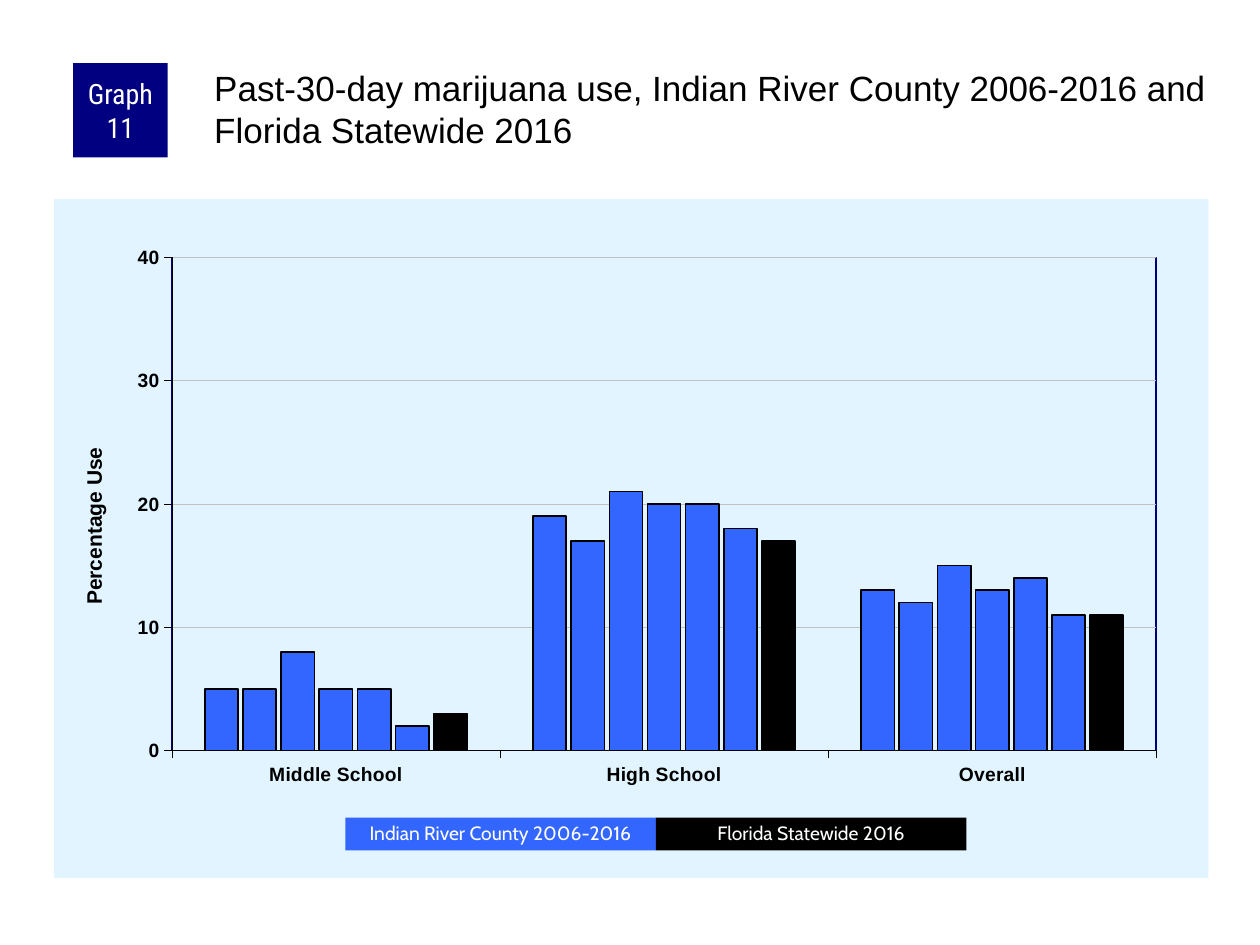
from pptx import Presentation
from pptx.chart.data import CategoryChartData
from pptx.dml.color import RGBColor
from pptx.enum.chart import XL_CHART_TYPE, XL_TICK_MARK
from pptx.enum.shapes import MSO_SHAPE
from pptx.enum.text import MSO_ANCHOR, MSO_AUTO_SIZE, PP_ALIGN
from pptx.oxml import parse_xml
from pptx.oxml.ns import nsdecls, qn
from pptx.util import Inches, Pt

COLORS = {"navy": "000080", "county": "3366FF", "state": "000000",
          "panel": "E1F4FF", "grid": "C0C0C0", "text": "000000", "white": "FFFFFF"}
CATEGORIES = ["Middle School", "High School", "Overall"]
COUNTY = [(5, 19, 13), (5, 17, 12), (8, 21, 15), (5, 20, 13), (5, 20, 14), (2, 18, 11)]
STATE = (3, 17, 11)


def rgb(name):
    """Look up a palette colour."""
    return RGBColor.from_string(COLORS[name])


def style_font(font, name, size, color, bold=False):
    """Set the face, size, colour and weight of a font."""
    font.name, font.size, font.bold = name, Pt(size), bold
    font.color.rgb = rgb(color)


def style_line(line, color, width):
    """Give a line a colour and a width in points."""
    line.color.rgb = rgb(color)
    line.width = Pt(width)


def set_insets(tf, left, top, right, bottom):
    """Set the four text margins in inches."""
    tf.margin_left, tf.margin_top = Inches(left), Inches(top)
    tf.margin_right, tf.margin_bottom = Inches(right), Inches(bottom)


def add_label(s, box, text, fill, font, size, spacing=1.0):
    """Add a filled box with centred white text."""
    sp = s.shapes.add_shape(MSO_SHAPE.RECTANGLE, *map(Inches, box))
    sp.shadow.inherit = False
    sp.fill.solid()
    sp.fill.fore_color.rgb = rgb(fill)
    sp.line.fill.background()
    tf = sp.text_frame
    tf.word_wrap = True
    tf.vertical_anchor = MSO_ANCHOR.MIDDLE
    set_insets(tf, 0.05, 0, 0.05, 0)
    p = tf.paragraphs[0]
    p.text, p.alignment, p.line_spacing = text, PP_ALIGN.CENTER, spacing
    style_font(p.font, font, size, "white")


def add_header(s, box):
    """Place the graph number and the slide title."""
    x, y, w, h = box
    badge, indent = 0.75, 1.09
    add_label(s, (x, y, badge, badge), "Graph 11", "navy", "Roboto Condensed", 16)
    sp = s.shapes.title
    sp.left, sp.top = Inches(x + indent), Inches(y)
    sp.width, sp.height = Inches(w - indent), Inches(h)
    tf = sp.text_frame
    tf.word_wrap, tf.auto_size = True, MSO_AUTO_SIZE.NONE
    tf.vertical_anchor = MSO_ANCHOR.TOP
    set_insets(tf, 0.03, 0.03, 0, 0)
    p = tf.paragraphs[0]
    p.text = "Past-30-day marijuana use, Indian River County 2006-2016 and Florida Statewide 2016"
    p.alignment = PP_ALIGN.LEFT
    style_font(p.font, "Arial", 20, "text")


def manual_layout(x, y, w=None, h=None):
    """Build a chart layout from shares of the chart's size."""
    target = '<c:layoutTarget val="inner"/>' if w else ""
    size = f'<c:w val="{w}"/><c:h val="{h}"/>' if w else ""
    return parse_xml(
        f'<c:layout {nsdecls("c")}><c:manualLayout>{target}<c:xMode val="edge"/>'
        f'<c:yMode val="edge"/><c:x val="{x}"/><c:y val="{y}"/>{size}'
        '</c:manualLayout></c:layout>')


def set_layout(parent, index, layout):
    """Replace the layout of a chart part."""
    for old in parent.findall(qn("c:layout")):
        parent.remove(old)
    parent.insert(index, layout)


def area_format(fill, line):
    """Build the fill and outline of a chart area."""
    return parse_xml(f'<c:spPr {nsdecls("c", "a")}>{fill}{line}</c:spPr>')


def style_axis(axis):
    """Give an axis its labels, ticks and line."""
    axis.major_tick_mark, axis.minor_tick_mark = XL_TICK_MARK.OUTSIDE, XL_TICK_MARK.NONE
    style_font(axis.tick_labels.font, "Arial", 11, "text", True)
    style_line(axis.format.line, "text", 0.25)


def format_value_axis(axis):
    """Set the scale, gridlines and title of the value axis."""
    axis.minimum_scale, axis.maximum_scale, axis.major_unit = 0, 40, 10
    style_line(axis.major_gridlines.format.line, "grid", 0.25)
    title = axis.axis_title
    p = title.text_frame.paragraphs[0]
    p.text = "Percentage Use"
    style_font(p.font, "Arial", 12, "text", True)
    body = title.text_frame._txBody
    body.bodyPr.set("rot", "-5400000")
    body.bodyPr.set("vert", "horz")
    set_layout(title._element, 1, manual_layout(0.02, 0.36))


def add_use_chart(s, box):
    """Add the column chart of marijuana use."""
    data = CategoryChartData()
    data.categories = CATEGORIES
    for i, values in enumerate(COUNTY + [STATE], 1):
        data.add_series(f"Series {i}", values)
    chart = s.shapes.add_chart(XL_CHART_TYPE.COLUMN_CLUSTERED, *map(Inches, box), data).chart
    chart.has_legend = chart.has_title = False
    style_font(chart.font, "Arial", 8, "text")
    plot = chart.plots[0]
    plot.gap_width, plot.overlap, plot.vary_by_categories = 200, -15, False
    for i, series in enumerate(plot.series):
        series.format.fill.solid()
        series.format.fill.fore_color.rgb = rgb("county" if i < len(COUNTY) else "state")
        style_line(series.format.line, "text", 1)
    style_axis(chart.category_axis)
    style_axis(chart.value_axis)
    format_value_axis(chart.value_axis)
    root = chart._chartSpace.find(qn("c:chart"))
    area = root.find(qn("c:plotArea"))
    set_layout(area, 0, manual_layout(0.102, 0.086, 0.853, 0.726))
    solid = '<a:solidFill><a:srgbClr val="{}"/></a:solidFill>'
    area.append(area_format("<a:noFill/>",
                            f'<a:ln w="12700">{solid.format(COLORS["navy"])}</a:ln>'))
    root.addnext(area_format(solid.format(COLORS["panel"]), "<a:ln><a:noFill/></a:ln>"))


def add_key(s, box):
    """Place the two halves of the colour key side by side."""
    x, y, w, h = box
    entries = [("Indian River County 2006-2016", "county"), ("Florida Statewide 2016", "state")]
    half = w / len(entries)
    for i, (text, fill) in enumerate(entries):
        add_label(s, (x + i * half, y, half, h), text, fill, "Cabin", 11, 0.9)


def main():
    """Build and save the slide."""
    prs = Presentation()
    prs.slide_width, prs.slide_height = Inches(10), Inches(7.5)
    s = prs.slides.add_slide(prs.slide_layouts[5])
    add_use_chart(s, (0.43, 1.58, 9.16, 5.39))
    add_header(s, (0.58, 0.5, 9.01, 0.83))
    add_key(s, (2.74, 6.49, 4.93, 0.26))
    prs.save("out.pptx")


if __name__ == "__main__":
    main()
